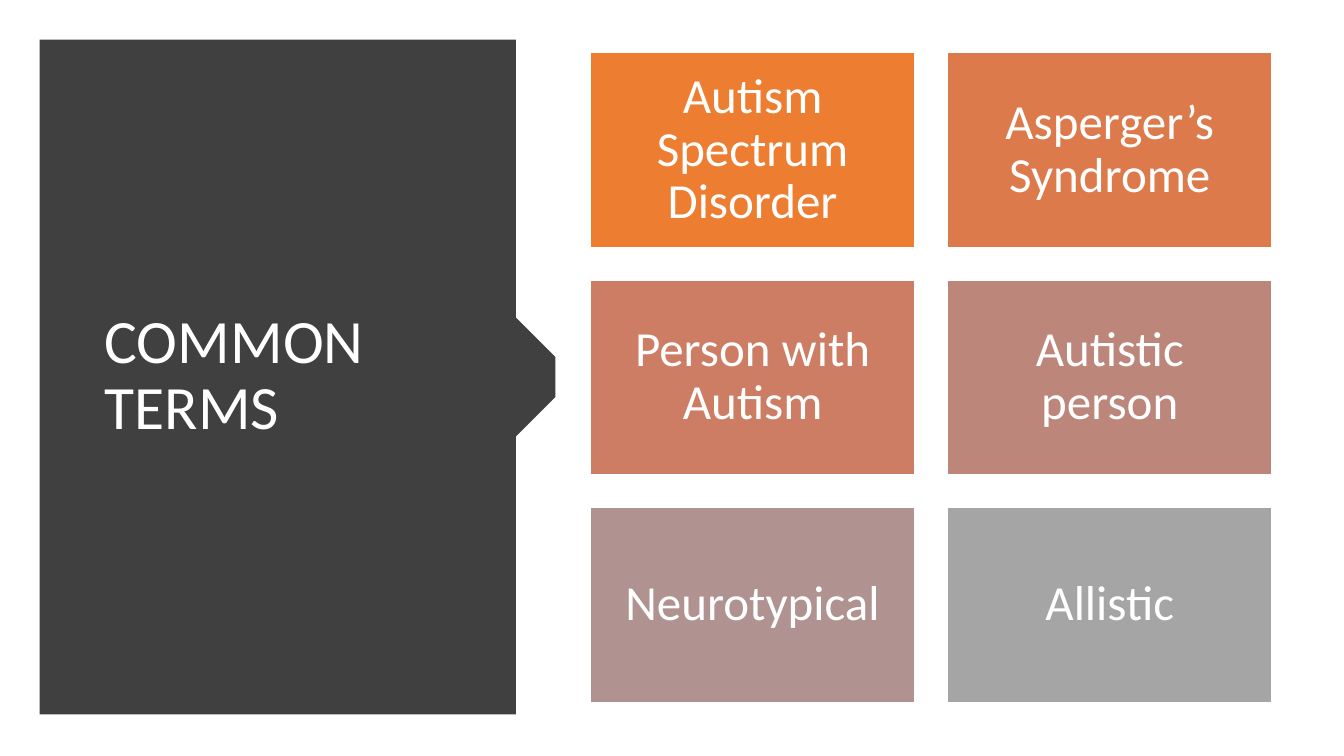
from pptx import Presentation
from pptx.dml.color import RGBColor
from pptx.enum import shapes, text
from pptx.util import Cm, Pt

COLORS = {"panel": "404040", "white": "FFFFFF"}
TERMS = [
    ("Autism Spectrum Disorder", "ED7D31"),
    ("Asperger’s Syndrome", "DC7A4B"),
    ("Person with Autism", "CC7D64"),
    ("Autistic person", "BD867B"),
    ("Neurotypical", "B09391"),
    ("Allistic", "A5A5A5"),
]


def write_text(shape, words, size, alignment):
    frame = shape.text_frame
    frame.word_wrap = True
    frame.vertical_anchor = text.MSO_ANCHOR.MIDDLE
    paragraph = frame.paragraphs[0]
    paragraph.text = words
    paragraph.alignment = alignment
    paragraph.line_spacing = 0.9
    paragraph.font.name = "Calibri"
    paragraph.font.size = Pt(size)
    paragraph.font.color.rgb = RGBColor.from_string(COLORS["white"])


presentation = Presentation()
presentation.slide_width = Cm(33.87)
presentation.slide_height = Cm(19.05)
slide = presentation.slides.add_slide(presentation.slide_layouts[6])

# Dark panel whose right edge bulges as a parabola
left, top, edge, height, bulge = 1.35, 1.32, 12.9, 16.36, 0.61
steps = 40
curve = []
for step in range(steps + 1):
    offset = 2 * step / steps - 1
    curve.append((edge + bulge * (1 - offset ** 2), top + height * step / steps))
builder = slide.shapes.build_freeform(left, top, scale=Cm(1))
builder.add_line_segments(curve + [(left, top + height)], close=True)
panel = builder.convert_to_shape()
panel.shadow.inherit = False
panel.fill.solid()
panel.fill.fore_color.rgb = RGBColor.from_string(COLORS["panel"])
panel.line.fill.background()

title = slide.shapes.add_textbox(Cm(2.39), Cm(2.82), Cm(9.5), Cm(13.34))
write_text(title, "COMMON TERMS", 44, text.PP_ALIGN.LEFT)

# Term cards in two columns
card_width, card_height, gap = 8.18, 4.91, 0.82
for index, (term, color) in enumerate(TERMS):
    row, column = divmod(index, 2)
    card = slide.shapes.add_shape(
        shapes.MSO_SHAPE.RECTANGLE,
        Cm(14.88 + column * (card_width + gap)),
        Cm(1.33 + row * (card_height + gap)),
        Cm(card_width), Cm(card_height))
    card.shadow.inherit = False
    card.fill.solid()
    card.fill.fore_color.rgb = RGBColor.from_string(color)
    card.line.color.rgb = RGBColor.from_string(COLORS["white"])
    card.line.width = Pt(1)
    frame = card.text_frame
    frame.margin_left = frame.margin_right = Cm(0.38)
    frame.margin_top = frame.margin_bottom = Cm(0.38)
    write_text(card, term, 35, text.PP_ALIGN.CENTER)

presentation.save("out.pptx")
